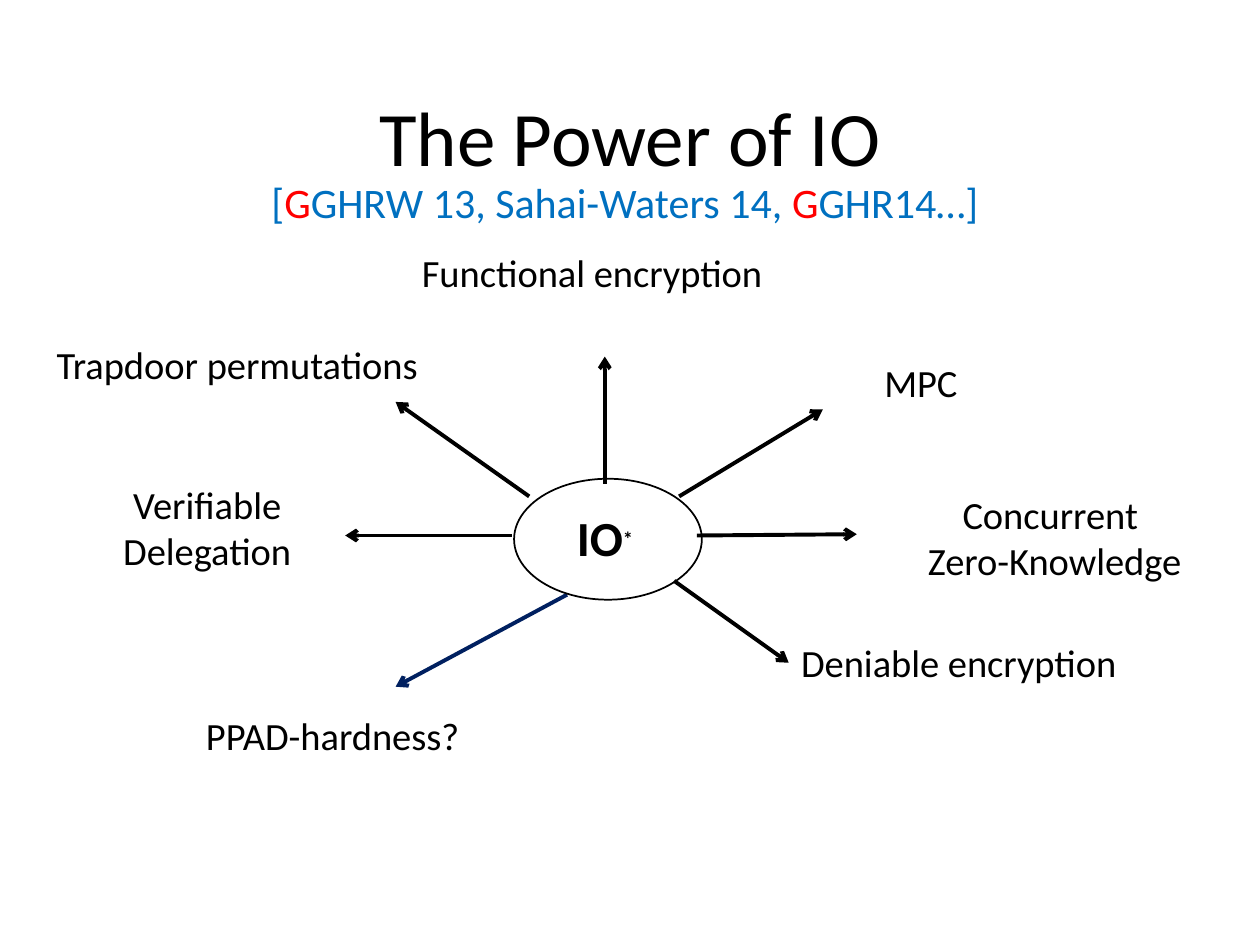
from pptx import Presentation
from pptx.dml.color import RGBColor
from pptx.enum import shapes, text
from pptx.oxml import parse_xml
from pptx.oxml.ns import nsdecls
from pptx.util import Inches, Pt

BLACK = RGBColor(0x00, 0x00, 0x00)
NAVY = RGBColor(0x00, 0x20, 0x60)
BLUE = RGBColor(0x00, 0x70, 0xC0)
RED = RGBColor(0xFF, 0x00, 0x00)
FONT = "Calibri"
LEFT, CENTER = text.PP_ALIGN.LEFT, text.PP_ALIGN.CENTER

LABELS = [
    ("Verifiable Delegation", (0.78, 3.77, 1.73, 0.84), CENTER),
    ("Concurrent \nZero-Knowledge", (6.83, 3.85, 3.08, 0.84), CENTER),
    ("Functional encryption", (3.25, 1.93, 3.28, 1.02), LEFT),
    ("Deniable encryption", (6.26, 5.02, 3, 1.02), LEFT),
    ("MPC", (6.92, 2.8, 2.8, 0.47), LEFT),
    ("Trapdoor permutations", (0.35, 2.66, 3.59, 0.47), LEFT),
    ("PPAD-hardness?", (0.4, 5.6, 4.48, 0.47), CENTER),
]
ARROWS = [
    ((4.5, 4.72), (3.14, 5.45), NAVY),
    ((4.2, 3.94), (3.14, 3.19), BLACK),
    ((4.06, 4.25), (2.74, 4.25), BLACK),
    ((4.8, 3.84), (4.8, 2.83), BLACK),
    ((5.39, 3.94), (6.53, 3.25), BLACK),
    ((5.53, 4.25), (6.8, 4.24), BLACK),
    ((5.35, 4.61), (6.26, 5.26), BLACK),
]
CITATION = [("[", BLUE), ("G", RED), ("GHRW 13, Sahai-Waters 14, ", BLUE),
            ("G", RED), ("GHR14…]", BLUE)]


def add_run(paragraph, content, size=22, color=BLACK, bold=False):
    """Append a formatted run to a paragraph and return it."""
    run = paragraph.add_run()
    run.text = content
    run.font.name = FONT
    run.font.size = Pt(size)
    run.font.bold = bold
    run.font.color.rgb = color
    return run


def add_text_box(slide, box, align=LEFT):
    """Add an empty wrapping text box and return its text frame."""
    frame = slide.shapes.add_textbox(*map(Inches, box)).text_frame
    frame.word_wrap = True
    frame.paragraphs[0].alignment = align
    return frame


def add_label(slide, content, box, align):
    """Add a label with one paragraph for each line."""
    frame = add_text_box(slide, box, align)
    for index, line in enumerate(content.split("\n")):
        paragraph = frame.add_paragraph() if index else frame.paragraphs[0]
        paragraph.alignment = align
        add_run(paragraph, line)


def add_arrow(slide, start, end, color):
    """Add a straight arrow pointing at its end."""
    connector = slide.shapes.add_connector(
        shapes.MSO_CONNECTOR.STRAIGHT, *map(Inches, start + end))
    connector.line.color.rgb = color
    connector.line.width = Pt(2.25)
    connector.line._get_or_add_ln().append(
        parse_xml(f'<a:tailEnd {nsdecls("a")} type="arrow"/>'))
    connector._element.spPr.append(parse_xml(f'<a:effectLst {nsdecls("a")}/>'))


def add_hub(slide):
    """Add the central ellipse with its starred caption."""
    paragraph = add_text_box(slide, (4.48, 3.98, 1, 0.52)).paragraphs[0]
    add_run(paragraph, "IO", size=28, bold=True)
    star = add_run(paragraph, "*", size=20, bold=True)
    star.font._element.set("baseline", "30000")
    ellipse = slide.shapes.add_shape(
        shapes.MSO_SHAPE.OVAL, *map(Inches, (4.08, 3.8, 1.49, 0.96)))
    ellipse.shadow.inherit = False
    ellipse.fill.background()
    ellipse.line.color.rgb = BLACK
    ellipse.line.width = Pt(1)


def set_title(slide, content):
    """Place and format the slide title."""
    title = slide.shapes.title
    title.left, title.top, title.width, title.height = map(
        Inches, (0.69, 0.4, 8.62, 1.45))
    title.text_frame.vertical_anchor = text.MSO_ANCHOR.MIDDLE
    paragraph = title.text_frame.paragraphs[0]
    paragraph.alignment = CENTER
    paragraph.line_spacing = 0.9
    add_run(paragraph, content, size=44)


def main():
    """Build and save the slide."""
    presentation = Presentation()
    presentation.slide_width, presentation.slide_height = Inches(10), Inches(7.5)
    slide = presentation.slides.add_slide(presentation.slide_layouts[5])
    set_title(slide, "The Power of IO")
    for start, end, color in ARROWS:
        add_arrow(slide, start, end, color)
    add_hub(slide)
    for content, box, align in LABELS:
        add_label(slide, content, box, align)
    citation = add_text_box(slide, (-0.36, 1.35, 10.64, 0.5), CENTER)
    for content, color in CITATION:
        add_run(citation.paragraphs[0], content, size=24, color=color)
    presentation.save("out.pptx")


if __name__ == "__main__":
    main()
